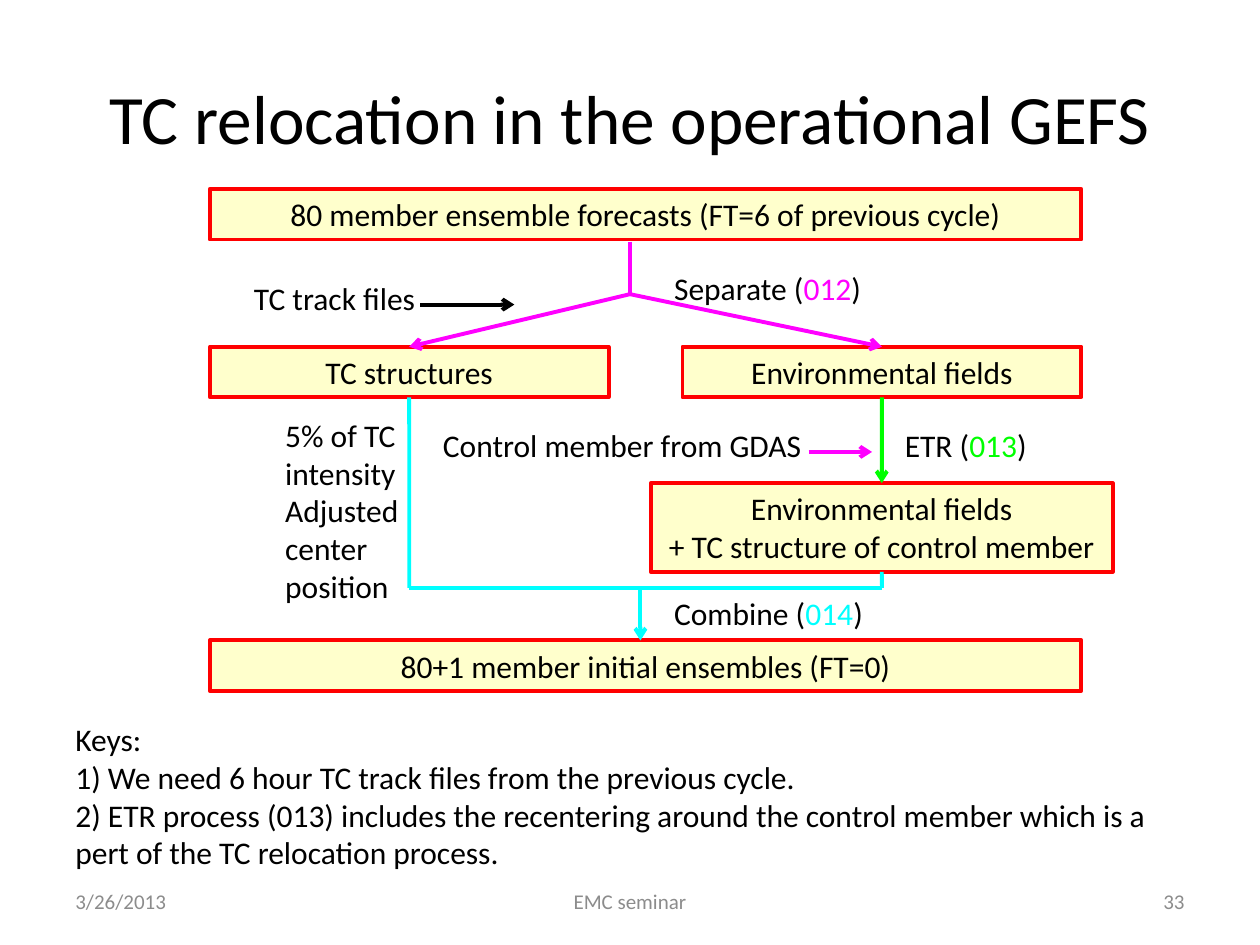
"""Build the slide on TC relocation in the operational GEFS."""
from lxml.etree import SubElement
from pptx import Presentation
from pptx.dml.color import RGBColor
from pptx.enum.shapes import MSO_CONNECTOR, MSO_SHAPE
from pptx.enum.text import MSO_ANCHOR, PP_ALIGN
from pptx.oxml.ns import qn
from pptx.util import Cm, Pt

BLACK = RGBColor(0x00, 0x00, 0x00)
GREY = RGBColor(0x8C, 0x8C, 0x8C)
RED = RGBColor(0xFF, 0x00, 0x00)
CREAM = RGBColor(0xFF, 0xFF, 0xCC)
PINK = RGBColor(0xFF, 0x00, 0xFF)
GREEN = RGBColor(0x00, 0xFF, 0x00)
CYAN = RGBColor(0x00, 0xFF, 0xFF)
LEFT, MID, RIGHT = PP_ALIGN.LEFT, PP_ALIGN.CENTER, PP_ALIGN.RIGHT
TOP, CENTER = MSO_ANCHOR.TOP, MSO_ANCHOR.MIDDLE


def write(shape, paras, align=LEFT, anchor=TOP, size=18, color=BLACK, accent=BLACK):
    """Fill a shape with paragraphs, each a list of runs; digits take the accent."""
    frame = shape.text_frame
    for name, value in {"word_wrap": True, "vertical_anchor": anchor}.items():
        setattr(frame, name, value)
    for index, parts in enumerate(paras):
        para = frame.add_paragraph() if index else frame.paragraphs[0]
        para.alignment = align
        for part in parts:
            if part == "\n":
                para.add_line_break()
                continue
            run = para.add_run()
            run.text = part
            for name, value in {"name": "Calibri", "size": Pt(size)}.items():
                setattr(run.font, name, value)
            run.font.color.rgb = accent if part.isdigit() else color


def link(start, end, color, arrow=True):
    """Draw a straight line between two points, with an arrowhead if asked."""
    line = slide.shapes.add_connector(
        MSO_CONNECTOR.STRAIGHT, *[Cm(n) for n in start + end])
    line.line.color.rgb = color
    line.line.width = Pt(2.25)
    if arrow:
        SubElement(line.line._get_or_add_ln(), qn("a:tailEnd"), type="arrow")
    SubElement(line._element.spPr, qn("a:effectLst"))
    return line


deck = Presentation()
deck.slide_width, deck.slide_height = Cm(25.4), Cm(19.05)
slide = deck.slides.add_slide(deck.slide_layouts[5])

title = slide.shapes.title
place = {"left": 1.27, "top": 0.76, "width": 22.86, "height": 3.18}
for name, value in place.items():
    setattr(title, name, Cm(value))
write(title, [["TC relocation in the operational GEFS"]], MID, CENTER, 39.6)

boxes = {}
for key, area, parts in [
    ("start", (4.23, 3.81, 17.57, 1.02),
     ["80 member ensemble forecasts (FT=6 of previous cycle)"]),
    ("storm", (4.23, 6.99, 8.04, 1.02), ["TC structures"]),
    ("field", (13.76, 6.99, 8.04, 1.02), ["Environmental fields"]),
    ("both", (13.12, 9.74, 9.31, 1.79),
     ["Environmental fields", "\n", "+ TC structure of control member"]),
    ("final", (4.23, 12.91, 17.57, 1.02),
     ["80+1 member initial ensembles (FT=0)"]),
]:
    box = slide.shapes.add_shape(MSO_SHAPE.RECTANGLE, *[Cm(n) for n in area])
    box.shadow.inherit = False
    box.fill.solid()
    box.fill.fore_color.rgb = CREAM
    box.line.color.rgb = RED
    box.line.width = Pt(2.25)
    write(box, [parts], MID)
    boxes[key] = box

fork, storm, field, join = (12.7, 5.93), 8.25, 17.78, 11.85
link((12.7, 4.87), fork, PINK, False)
link(fork, (storm, 6.99), PINK).end_connect(boxes["storm"], 0)
link(fork, (field, 6.99), PINK).end_connect(boxes["field"], 0)
drop = link((field, 8.01), (field, 9.74), GREEN)
drop.begin_connect(boxes["field"], 2)
drop.end_connect(boxes["both"], 0)
link((storm, 8.01), (storm, join), CYAN, False).begin_connect(boxes["storm"], 2)
link((storm, join), (field, join), CYAN, False)
link((field, 11.53), (field, join), CYAN, False).begin_connect(boxes["both"], 2)
link((12.91, join), (12.91, 12.91), CYAN)
link((8.47, 6.14), (10.37, 6.14), BLACK)
link((16.3, 9.11), (17.58, 9.11), PINK)

note = {}
foot = {"size": 12, "color": GREY, "anchor": CENTER}
for area, paras, style in [
    ((13.34, 5.29, 4.45, 1.02), [["Separate (", "012", ")"]], {"accent": PINK}),
    ((17.99, 8.47, 4.66, 1.06), [["ETR (", "013", ")"]], {"accent": GREEN}),
    ((13.34, 11.85, 5.08, 1.02), [["Combine (", "014", ")"]], {"accent": CYAN}),
    ((5.5, 8.26, 2.96, 4.11),
     [["5% of TC intensity Adjusted center position"]], note),
    ((4.87, 5.5, 5.29, 1.02), [["TC track files"]], note),
    ((8.68, 8.47, 7.83, 1.02), [["Control member from GDAS"]], note),
    ((1.27, 14.39, 23.06, 3.32),
     [["Keys:"],
      ["1) We need 6 hour TC track files from the previous cycle.", "\n",
       "2) ETR process (013) includes the recentering around the control "
       "member which is a pert of the TC relocation process."]], note),
    ((1.27, 17.65, 5.93, 1.02), [["3/26/2013"]], foot),
    ((18.2, 17.65, 5.93, 1.02), [["33"]], foot | {"align": RIGHT, "accent": GREY}),
    ((8.68, 17.65, 8.04, 1.02), [["EMC seminar"]], foot | {"align": MID}),
]:
    write(slide.shapes.add_textbox(*[Cm(n) for n in area]), paras, **style)

deck.save("out.pptx")
